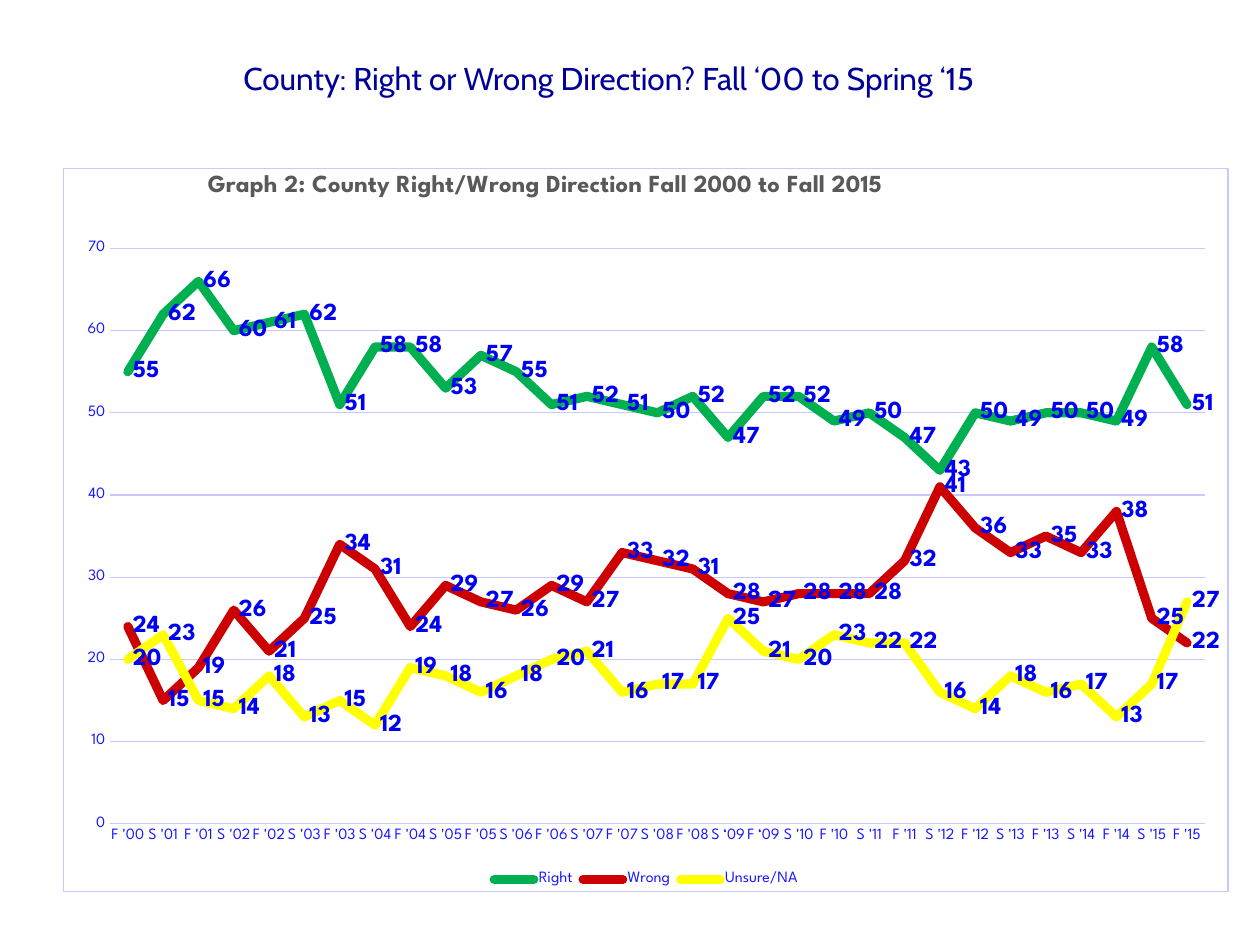
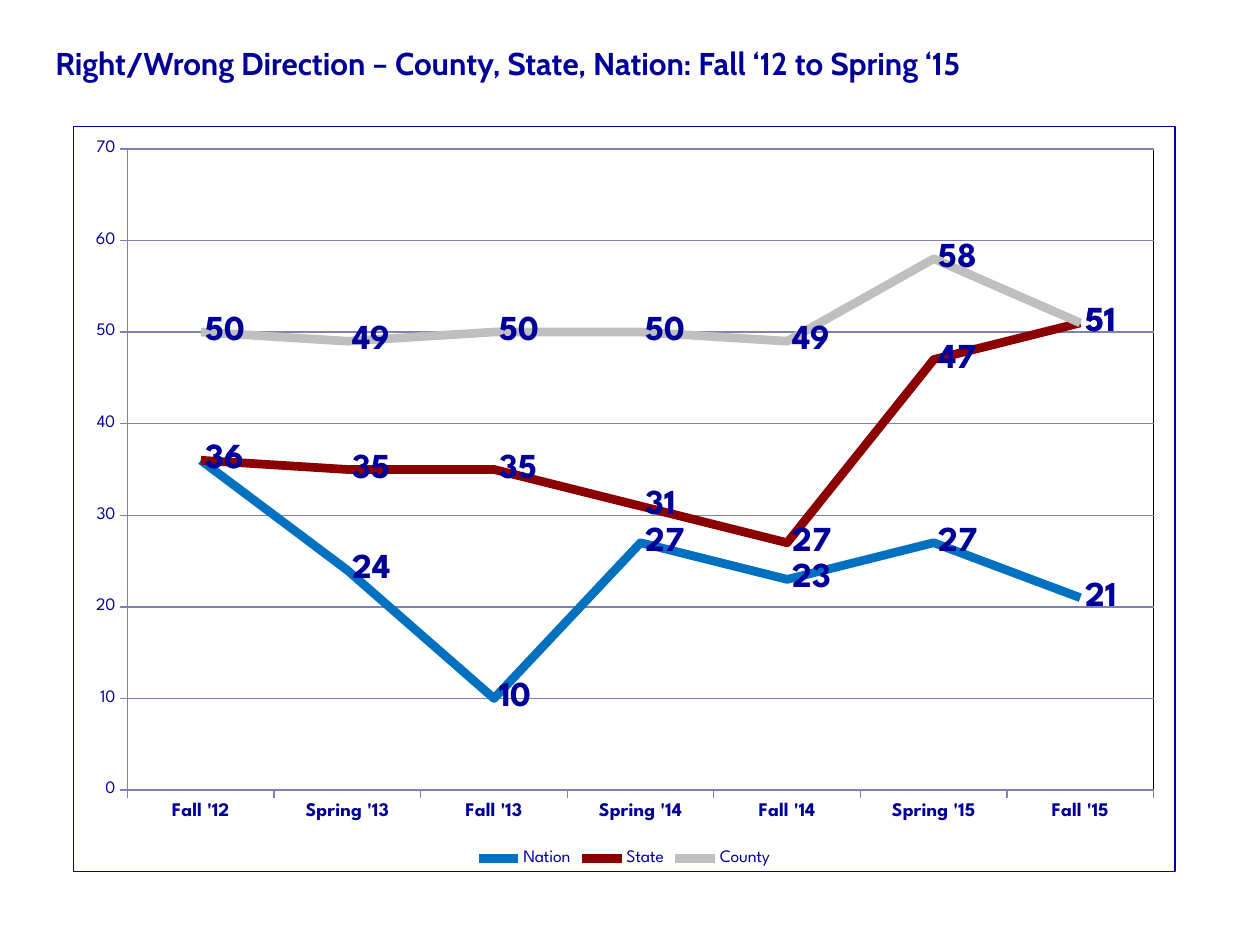
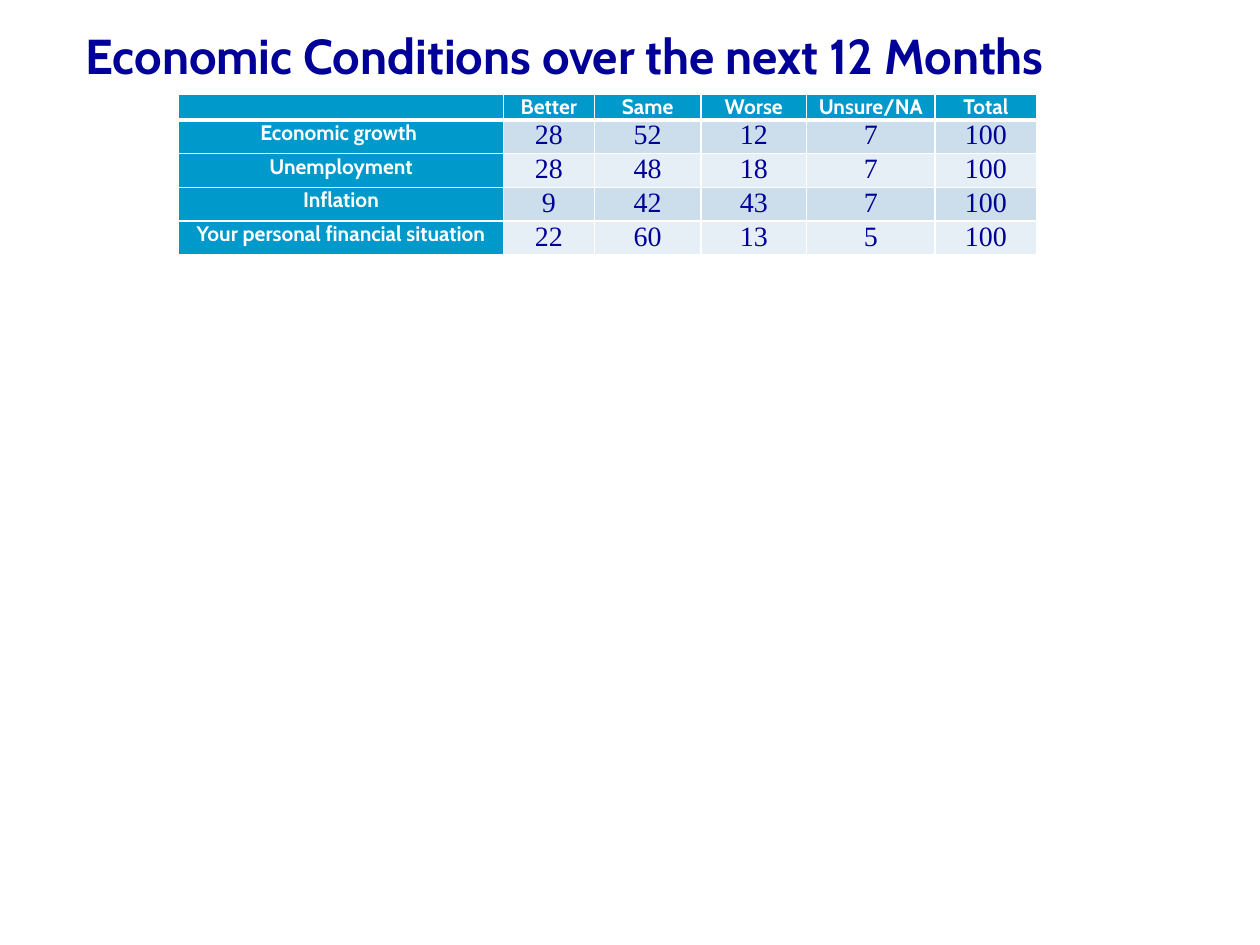
from lxml.etree import SubElement
from pptx import Presentation
from pptx.chart.data import CategoryChartData
from pptx.dml.color import RGBColor
from pptx.enum.chart import XL_CHART_TYPE, XL_LABEL_POSITION, XL_LEGEND_POSITION, XL_TICK_MARK
from pptx.enum.text import MSO_ANCHOR, MSO_AUTO_SIZE, PP_ALIGN
from pptx.oxml import parse_xml
from pptx.oxml.ns import nsdecls, qn
from pptx.util import Cm, Pt

COLORS = {
    "navy": "000099", "white": "FFFFFF", "black": "000000", "grey": "595959",
    "axis text": "1717FF", "pale line": "C9C9FF", "grid": "8080B4", "label": "0000F2",
    "green": "00B050", "red": "CC0000", "yellow": "FFFF00",
    "blue": "0070C0", "dark red": "8B0000", "silver": "BFBFBF",
    "header": "0099CC", "band": "CCDEEC", "light band": "E7EFF6",
}
TITLE_FONT, CHART_FONT, NUMBER_FONT = "Cabin", "League Spartan", "Times New Roman"

# Content: boxes are left, top, width, height in cm; plot areas are measured inside the chart
COUNTY = {
    "box": (1.27, 3.38, 23.5, 14.61), "plot": (0.94, 1.62, 22.09, 11.62),
    "title": "Graph 2: County Right/Wrong Direction Fall 2000 to Fall 2015",
    "categories": [
        "F '00", "S '01", "F '01", "S '02", "F '02", "S '03", "F '03", "S '04",
        "F '04", "S '05", "F '05", "S '06", "F '06", "S '07", "F '07", "S '08",
        "F '08", "S ‘09", "F ‘09", "S '10", "F '10", "S '11", "F '11", "S '12",
        "F '12", "S '13", "F '13", "S '14", "F '14", "S '15", "F '15"],
    "series": [
        ("Right", "green", [
            55, 62, 66, 60, 61, 62, 51, 58, 58, 53, 57, 55, 51, 52, 51, 50,
            52, 47, 52, 52, 49, 50, 47, 43, 50, 49, 50, 50, 49, 58, 51]),
        ("Wrong", "red", [
            24, 15, 19, 26, 21, 25, 34, 31, 24, 29, 27, 26, 29, 27, 33, 32,
            31, 28, 27, 28, 28, 28, 32, 41, 36, 33, 35, 33, 38, 25, 22]),
        ("Unsure/NA", "yellow", [
            20, 23, 15, 14, 18, 13, 15, 12, 19, 18, 16, 18, 20, 21, 16, 17,
            17, 25, 21, 20, 23, 22, 22, 16, 14, 18, 16, 17, 13, 17, 27])],
    "line": 5.25, "cap": "rnd", "label": (14, "label"), "text": "axis text",
    "sizes": (9, 9, 9), "bold categories": False, "grid": "pale line",
    "border": "pale line", "tick": XL_TICK_MARK.NONE, "last drawn first": False,
}
REGIONS = {
    "box": (1.47, 2.54, 22.23, 15.04), "plot": (1.09, 0.45, 20.71, 12.95),
    "title": None,
    "categories": ["Fall '12", "Spring '13", "Fall '13", "Spring '14",
                   "Fall '14", "Spring '15", "Fall '15"],
    "series": [
        ("County", "silver", [50, 49, 50, 50, 49, 58, 51]),
        ("State", "dark red", [36, 35, 35, 31, 27, 47, 51]),
        ("Nation", "blue", [36, 24, 10, 27, 23, 27, 21])],
    "line": 5, "cap": "flat", "label": (20, "navy"), "text": "navy",
    "sizes": (11, 10, 10), "bold categories": True, "grid": "grid",
    "border": "navy", "tick": XL_TICK_MARK.OUTSIDE, "last drawn first": True,
}
OUTLOOK = [
    ("", "Better", "Same", "Worse", "Unsure/NA", "Total"),
    ("Economic growth ", 28, 52, 12, 7, 100),
    ("Unemployment", 28, 48, 18, 7, 100),
    ("Inflation", 9, 42, 43, 7, 100),
    ("Your personal financial situation", 22, 60, 13, 5, 100),
]
OUTLOOK_AT = (3.6, 1.9)
COLUMN_WIDTHS = (6.55, 1.83, 2.15, 2.13, 2.59, 2.05)
HEADER_HEIGHT, ROW_HEIGHT = 0.48, 0.68


def rgb(name):
    return RGBColor.from_string(COLORS[name])


def style(font, name, size, color, bold=False):
    font.name, font.size, font.bold = name, Pt(size), bold
    font.color.rgb = rgb(color)


def add_slide(prs, title, box, size=18, bold=True, align=PP_ALIGN.LEFT,
              anchor=MSO_ANCHOR.TOP, indent=0):
    s = prs.slides.add_slide(prs.slide_layouts[5])
    sp = s.shapes.title
    sp.left, sp.top, sp.width, sp.height = map(Cm, box)
    tf = sp.text_frame
    tf.text = title
    tf.word_wrap, tf.auto_size, tf.vertical_anchor = True, MSO_AUTO_SIZE.NONE, anchor
    p = tf.paragraphs[0]
    p.alignment = align
    p._p.get_or_add_pPr().set("indent", str(Cm(indent)))
    style(p.font, TITLE_FONT, size, "navy", bold)
    return s


def set_layout(parent, position, **shares):
    """Place a chart part by shares of the chart's size."""
    for old in parent.findall(qn("c:layout")):
        parent.remove(old)
    layout = parse_xml(f"<c:layout {nsdecls('c')}/>")
    manual = SubElement(layout, qn("c:manualLayout"))
    if "w" in shares:
        SubElement(manual, qn("c:layoutTarget")).set("val", "inner")
    for side in ("x", "y"):
        SubElement(manual, qn(f"c:{side}Mode")).set("val", "edge")
    for key, value in shares.items():
        SubElement(manual, qn(f"c:{key}")).set("val", str(value))
    parent.insert(position, layout)


def frame(color):
    return parse_xml(
        f'<c:spPr {nsdecls("c", "a")}><a:solidFill><a:srgbClr val="{COLORS["white"]}"/>'
        f'</a:solidFill><a:ln w="{Pt(0.75)}"><a:solidFill>'
        f'<a:srgbClr val="{COLORS[color]}"/></a:solidFill></a:ln></c:spPr>')


def set_line(line, color, width=0.75):
    line.color.rgb = rgb(color)
    line.width = Pt(width)


def add_line_chart(s, c):
    data = CategoryChartData(number_format="General")
    data.categories = c["categories"]
    for name, _, values in c["series"]:
        data.add_series(name, values)
    chart = s.shapes.add_chart(XL_CHART_TYPE.LINE, *map(Cm, c["box"]), data).chart
    style(chart.font, CHART_FONT, 10, "navy")
    category_size, value_size, legend_size = c["sizes"]

    # Title
    chart.has_title = c["title"] is not None
    if chart.has_title:
        tf = chart.chart_title.text_frame
        tf.text = c["title"]
        style(tf.paragraphs[0].font, CHART_FONT, 14, "grey", True)
        set_layout(chart.chart_title._element, 1, x=0.12, y=0)

    # Axes
    cat, val = chart.category_axis, chart.value_axis
    style(cat.tick_labels.font, CHART_FONT, category_size, c["text"], c["bold categories"])
    style(val.tick_labels.font, CHART_FONT, value_size, c["text"])
    for axis in (cat, val):
        axis.major_tick_mark, axis.minor_tick_mark = c["tick"], XL_TICK_MARK.NONE
        set_line(axis.format.line, c["grid"])
        axis._element.find(qn("c:txPr")).find(qn("a:bodyPr")).set("rot", "0")
    if c["tick"] == XL_TICK_MARK.NONE:
        val.format.line.fill.background()
    val.minimum_scale, val.maximum_scale, val.major_unit = 0, 70, 10
    val.has_major_gridlines = True
    set_line(val.major_gridlines.format.line, c["grid"])

    # Legend
    chart.has_legend = True
    chart.legend.position = XL_LEGEND_POSITION.BOTTOM
    chart.legend.include_in_layout = False
    style(chart.legend.font, CHART_FONT, legend_size, c["text"])

    # Lines and their labels
    plot = chart.plots[0]
    plot.vary_by_categories = False
    label_size, label_color = c["label"]
    for series, (_, color, _) in zip(plot.series, c["series"]):
        series.smooth = False
        set_line(series.format.line, color, c["line"])
        series.format.line._get_or_add_ln().set("cap", c["cap"])
        labels = series.data_labels
        labels.show_value, labels.position = True, XL_LABEL_POSITION.RIGHT
        style(labels.font, CHART_FONT, label_size, label_color, True)

    # Drawing order
    space = chart._chartSpace
    area = space.find(qn("c:chart")).find(qn("c:plotArea"))
    if c["last drawn first"]:
        front, *others = area.find(qn("c:lineChart")).findall(qn("c:ser"))
        for ser in others:
            front.addprevious(ser)
            front = ser

    # Frames and plot area
    space.find(qn("c:chart")).addnext(frame(c["border"]))
    x, y, w, h = c["plot"]
    width, height = c["box"][2:]
    set_layout(area, 0, x=x / width, y=y / height, w=w / width, h=h / height)
    if c["title"] is None:
        area.append(frame("black"))


def add_borders(cell, bottom):
    tcPr = cell._tc.get_or_add_tcPr()
    for side, width in (("L", 1), ("R", 1), ("T", 1), ("B", bottom)):
        ln = SubElement(tcPr, qn(f"a:ln{side}"), w=str(Pt(width)))
        fill = SubElement(ln, qn("a:solidFill"))
        SubElement(fill, qn("a:srgbClr")).set("val", COLORS["white"])


def add_outlook_table(s):
    heights = [HEADER_HEIGHT] + [ROW_HEIGHT] * (len(OUTLOOK) - 1)
    table = s.shapes.add_table(
        len(OUTLOOK), len(COLUMN_WIDTHS), *map(Cm, OUTLOOK_AT),
        Cm(sum(COLUMN_WIDTHS)), Cm(sum(heights))).table
    for column, width in zip(table.columns, COLUMN_WIDTHS):
        column.width = Cm(width)
    for i, (row, height) in enumerate(zip(OUTLOOK, heights)):
        table.rows[i].height = Cm(height)
        for j, value in enumerate(row):
            cell = table.cell(i, j)
            heading = i == 0 or j == 0
            add_borders(cell, 3 if i == 0 else 1)
            cell.fill.solid()
            cell.fill.fore_color.rgb = rgb(
                "header" if heading else "band" if i % 2 else "light band")
            cell.margin_left = cell.margin_right = Cm(0.18)
            cell.margin_top = cell.margin_bottom = 0
            cell.text = str(value)
            p = cell.text_frame.paragraphs[0]
            p.alignment = PP_ALIGN.CENTER
            if heading:
                style(p.font, TITLE_FONT, 12, "white", True)
            else:
                style(p.font, NUMBER_FONT, 16, "navy")


def main():
    prs = Presentation()
    prs.slide_width, prs.slide_height = Cm(25.4), Cm(19.05)

    # County direction
    s = add_slide(prs, "County: Right or Wrong Direction? Fall ‘00 to Spring ‘15",
                  (2.11, 1.07, 20.32, 1.02), bold=False, align=PP_ALIGN.CENTER)
    s.shapes.title.fill.solid()
    s.shapes.title.fill.fore_color.rgb = rgb("white")
    add_line_chart(s, COUNTY)

    # County, state and nation
    s = add_slide(prs, "Right/Wrong Direction – County, State, Nation: Fall ‘12 to Spring ‘15",
                  (0.1, 0.76, 23.42, 1.02), anchor=MSO_ANCHOR.MIDDLE, indent=0.76)
    add_line_chart(s, REGIONS)

    # Economic outlook
    s = add_slide(prs, "Economic Conditions over the next 12 Months",
                  (1.47, 0.38, 23.47, 2.24), size=28)
    add_outlook_table(s)

    prs.save("out.pptx")


if __name__ == "__main__":
    main()
